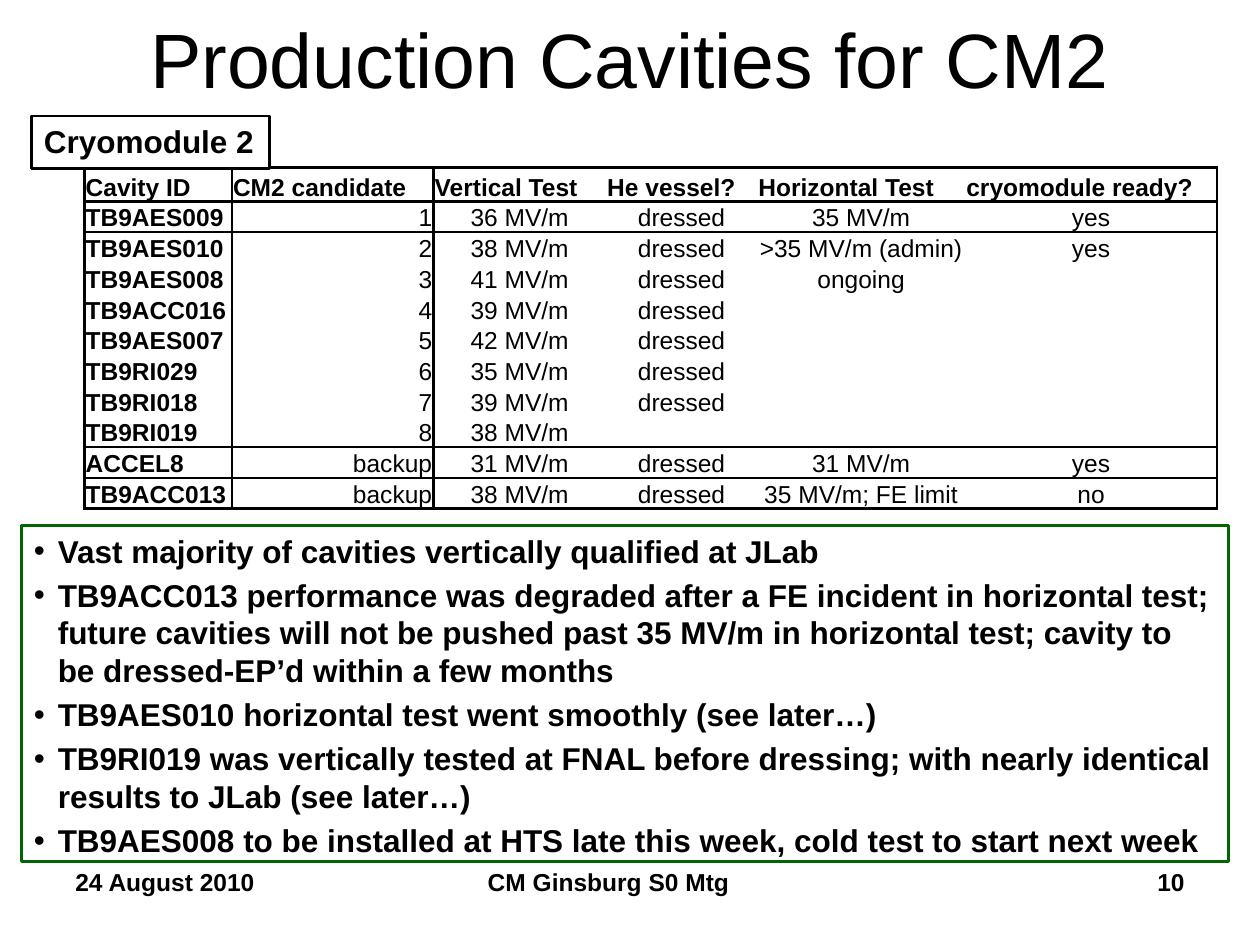
from dataclasses import dataclass

from lxml import etree
from pptx import Presentation
from pptx import util as u
from pptx.dml.color import RGBColor
from pptx.enum import shapes, text
from pptx.oxml import ns

COLOURS = {"ink": "000000", "paper": "FFFFFF", "frame": "006600"}
FONT = "Arial"
LINE_WIDTH = u.Pt(1.5)
NO_STYLE = "{2D5ABB26-0587-4C30-8999-92F81FD0307C}"
LEFT, CENTER, RIGHT = text.PP_ALIGN.LEFT, text.PP_ALIGN.CENTER, text.PP_ALIGN.RIGHT

COLUMN_WIDTHS = [1.17, 1.6, 1.37, 1.2, 1.65, 2]
HEADER_HEIGHT, ROW_HEIGHT = 0.27, 0.23
COLUMN_ALIGNS = [LEFT, RIGHT] + [CENTER] * 4
CAVITIES = [
    ["Cavity ID", "CM2 candidate", "Vertical Test", "He vessel?", "Horizontal Test", "cryomodule ready?"],
    ["TB9AES009", "1", "36 MV/m", "dressed", "35 MV/m", "yes"],
    ["TB9AES010", "2", "38 MV/m", "dressed", ">35 MV/m (admin)", "yes"],
    ["TB9AES008", "3", "41 MV/m", "dressed", "ongoing", ""],
    ["TB9ACC016", "4", "39 MV/m", "dressed", "", ""],
    ["TB9AES007", "5", "42 MV/m", "dressed", "", ""],
    ["TB9RI029", "6", "35 MV/m", "dressed", "", ""],
    ["TB9RI018", "7", "39 MV/m", "dressed", "", ""],
    ["TB9RI019", "8", "38 MV/m", "", "", ""],
    ["ACCEL8", "backup", "31 MV/m", "dressed", "31 MV/m", "yes"],
    ["TB9ACC013", "backup", "38 MV/m", "dressed", "35 MV/m; FE limit", "no"],
]
FIRST_BACKUP = 9
LAST_ROW, LAST_COLUMN = len(CAVITIES) - 1, len(COLUMN_WIDTHS) - 1

NOTES = [
    "Vast majority of cavities vertically qualified at JLab",
    "TB9ACC013 performance was degraded after a FE incident in horizontal test; "
    "future cavities will not be pushed past 35 MV/m in horizontal test; "
    "cavity to be dressed-EP’d within a few months",
    "TB9AES010 horizontal test went smoothly (see later…)",
    "TB9RI019 was vertically tested at FNAL before dressing; "
    "with nearly identical results to JLab (see later…)",
    "TB9AES008 to be installed at HTS late this week, cold test to start next week",
]


@dataclass
class Label:
    words: str
    left: float
    top: float
    width: float
    height: float
    size: int
    align: text.PP_ALIGN
    bold: bool = True
    anchor: text.MSO_ANCHOR = text.MSO_ANCHOR.TOP


LABELS = [
    Label("24 August 2010", 0.5, 6.83, 2.33, 0.52, 14, LEFT),
    Label("CM Ginsburg S0 Mtg", 3.08, 6.83, 3.5, 0.52, 14, CENTER),
    Label("10", 7.17, 6.83, 2.33, 0.52, 14, RIGHT),
    Label("Production Cavities for CM2", 0.5, 0, 9, 0.92, 44, CENTER, False, text.MSO_ANCHOR.MIDDLE),
]


def colour(name: str) -> RGBColor:
    return RGBColor.from_string(COLOURS[name])


def write(para, words: str, size: int, bold: bool, align: text.PP_ALIGN = LEFT) -> None:
    para.alignment = align
    span = para.add_run()
    span.text = words
    span.font.name = FONT
    span.font.size = u.Pt(size)
    span.font.bold = bold
    span.font.color.rgb = colour("ink")


def add_label(page, label: Label) -> None:
    box = page.shapes.add_textbox(
        u.Inches(label.left), u.Inches(label.top), u.Inches(label.width), u.Inches(label.height))
    box.text_frame.word_wrap = True
    box.text_frame.vertical_anchor = label.anchor
    write(box.text_frame.paragraphs[0], label.words, label.size, label.bold, label.align)


def add_frame(page, left: float, top: float, width: float, height: float, line: str):
    """Add an unfilled, top-anchored rectangle."""
    box = page.shapes.add_shape(
        shapes.MSO_SHAPE.RECTANGLE, u.Inches(left), u.Inches(top), u.Inches(width), u.Inches(height))
    box.shadow.inherit = False
    box.fill.background()
    box.line.color.rgb = colour(line)
    box.line.width = LINE_WIDTH
    box.text_frame.vertical_anchor = text.MSO_ANCHOR.TOP
    box.text_frame.word_wrap = True
    return box


def add_bullet(para) -> None:
    properties = para._p.get_or_add_pPr()
    indent = u.Inches(0.19)
    properties.set("marL", str(indent))
    properties.set("indent", str(-indent))
    etree.SubElement(properties, ns.qn("a:buFont"), typeface=FONT)
    etree.SubElement(properties, ns.qn("a:buChar"), char="•")


def set_borders(cell, row: int, column: int) -> None:
    """Outline the table, its header, its ID column and the backup rows."""
    edges = {
        "a:lnL": column in (0, 1),
        "a:lnR": column in (0, LAST_COLUMN),
        "a:lnT": row in (0, 1, FIRST_BACKUP),
        "a:lnB": row in (0, FIRST_BACKUP - 1, LAST_ROW),
    }
    properties = cell._tc.get_or_add_tcPr()
    for tag, drawn in edges.items():
        if drawn:
            line = etree.SubElement(properties, ns.qn(tag), w=str(LINE_WIDTH))
            fill = etree.SubElement(line, ns.qn("a:solidFill"))
            etree.SubElement(fill, ns.qn("a:srgbClr"), val=COLOURS["ink"])


def fill_cell(cell, row: int, column: int) -> None:
    cell.margin_left = cell.margin_right = cell.margin_top = u.Inches(0.01)
    cell.margin_bottom = 0
    cell.vertical_anchor = text.MSO_ANCHOR.BOTTOM
    set_borders(cell, row, column)
    cell.fill.background()
    para = cell.text_frame.paragraphs[0]
    words = CAVITIES[row][column]
    if words:
        align = LEFT if row == 0 else COLUMN_ALIGNS[column]
        write(para, words, 14, row == 0 or column == 0, align)
    else:
        etree.SubElement(para._p, ns.qn("a:endParaRPr"), sz="1400")


def add_cavity_table(page) -> None:
    height = HEADER_HEIGHT + ROW_HEIGHT * LAST_ROW
    frame = page.shapes.add_table(
        len(CAVITIES), len(COLUMN_WIDTHS), u.Inches(0.67), u.Inches(1.33),
        u.Inches(sum(COLUMN_WIDTHS)), u.Inches(height))
    table = frame.table
    table.first_row = table.horz_banding = False
    table._tbl.tblPr.find(ns.qn("a:tableStyleId")).text = NO_STYLE
    for column, width in enumerate(COLUMN_WIDTHS):
        table.columns[column].width = u.Inches(width)
    for row in range(len(CAVITIES)):
        table.rows[row].height = u.Inches(ROW_HEIGHT if row else HEADER_HEIGHT)
        for column in range(len(COLUMN_WIDTHS)):
            fill_cell(table.cell(row, column), row, column)


def add_notes_box(page) -> None:
    box = add_frame(page, 0.17, 4.17, 9.58, 2.67, "frame")
    for index, note in enumerate(NOTES):
        para = box.text_frame.add_paragraph() if index else box.text_frame.paragraphs[0]
        if index:
            para.space_before = u.Pt(3.6)
        add_bullet(para)
        write(para, note, 18, True)


def add_module_tag(page) -> None:
    box = add_frame(page, 0.25, 0.92, 1.89, 0.42, "ink")
    box.fill.solid()
    box.fill.fore_color.rgb = colour("paper")
    box.text_frame.word_wrap = False
    box.text_frame.auto_size = text.MSO_AUTO_SIZE.SHAPE_TO_FIT_TEXT
    write(box.text_frame.paragraphs[0], "Cryomodule 2", 18, True)


def main() -> None:
    deck = Presentation()
    deck.slide_width, deck.slide_height = u.Inches(10), u.Inches(7.5)
    page = deck.slides.add_slide(deck.slide_layouts[6])
    for label in LABELS:
        add_label(page, label)
    add_cavity_table(page)
    add_notes_box(page)
    add_module_tag(page)
    deck.save("out.pptx")


if __name__ == "__main__":
    main()
